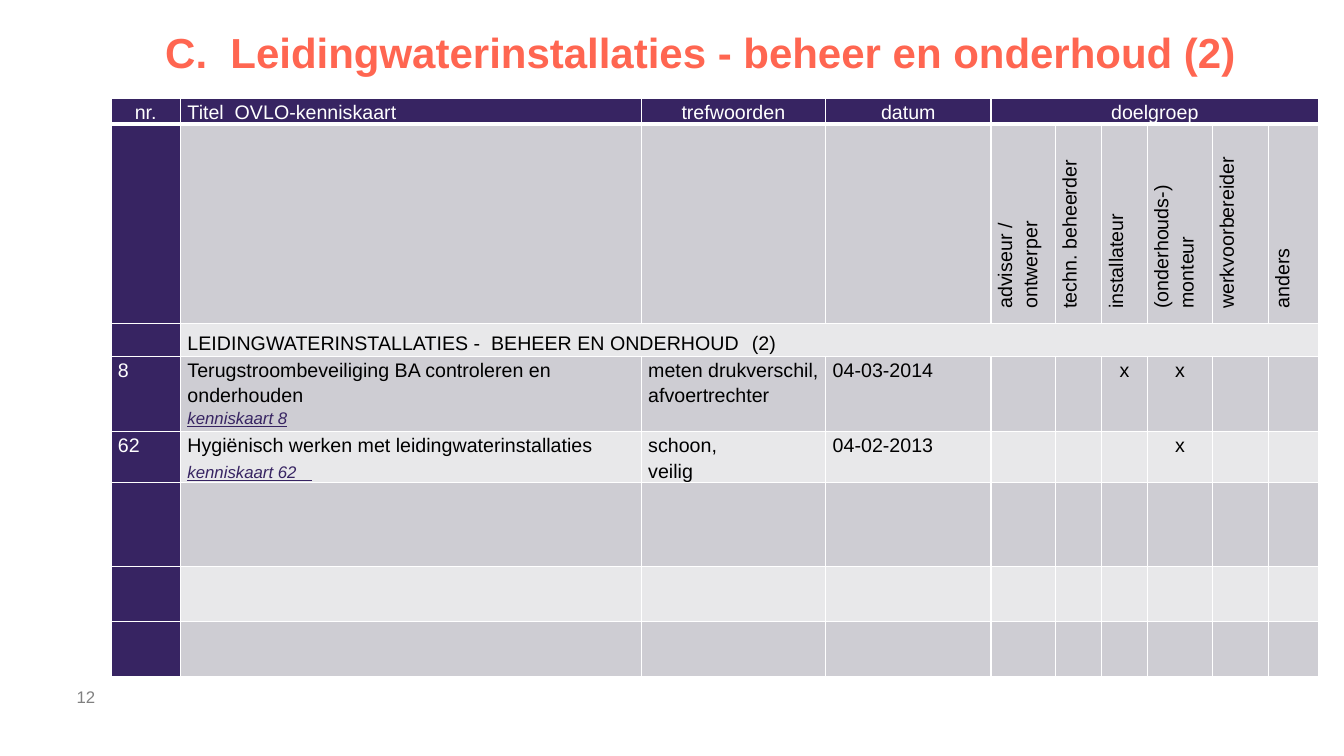
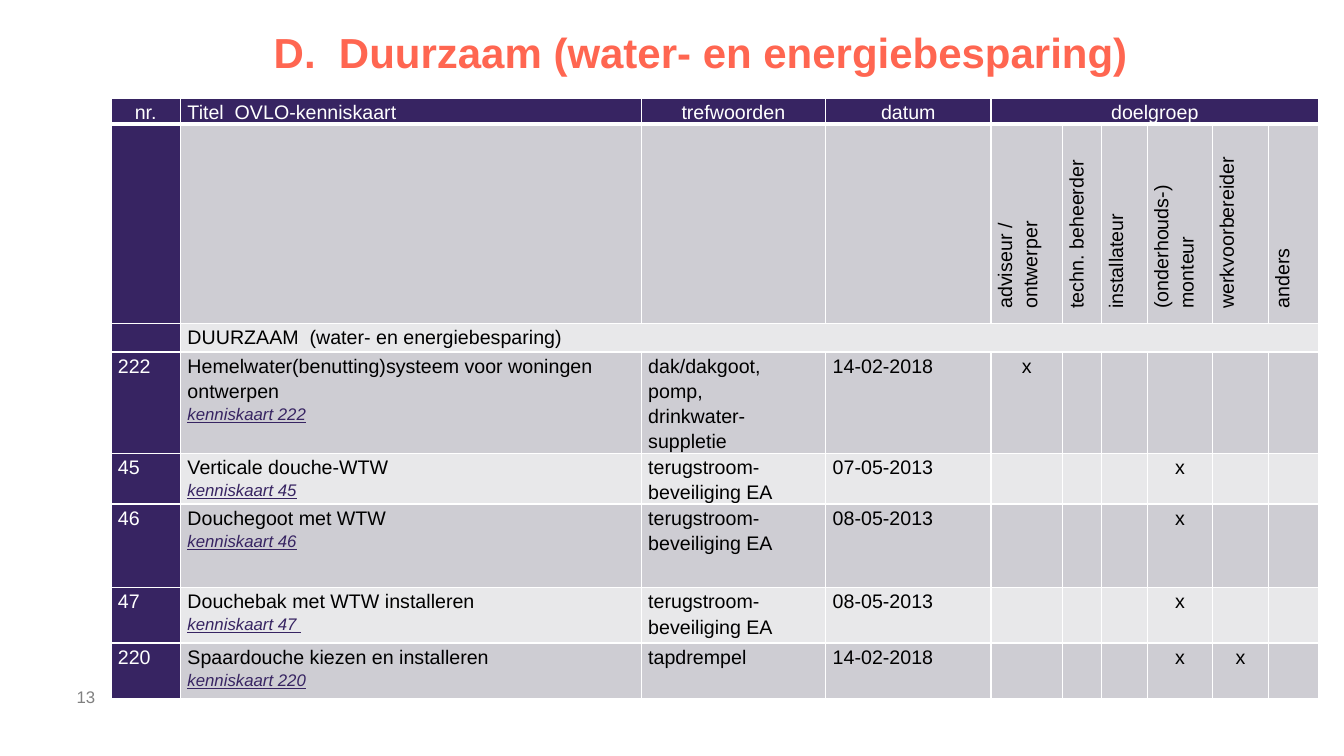
from lxml import etree
from pptx import Presentation
from pptx import util as u
from pptx.dml.color import RGBColor
from pptx.enum import text
from pptx.oxml.ns import qn

FONT = "Arial"
PURPLE, CORAL, GREY = "372462", "FF6651", "808080"
WHITE, BLACK = "FFFFFF", "000000"
BANDS = ("CECDD3", "E8E8EA")
CENTER = text.PP_ALIGN.CENTER

WIDTH, HEIGHT = 13.33, 7.5
TITLE_BOX = (1.12, 0.27, 11.78, 0.54)
NUMBER_BOX = (0.76, 6.71, 0.71, 0.4)
TABLE_LEFT, TABLE_TOP = 1.1, 0.98

HEADERS = ["nr.", "Titel  OVLO-kenniskaart", "trefwoorden", "datum", "doelgroep"]
GROUPS = ["adviseur / ontwerper", "techn. beheerder", "installateur",
          "(onderhouds-)\nmonteur", "werkvoorbereider", "anders"]
FIRST_GROUP = 4
COLUMN_COUNT = FIRST_GROUP + len(GROUPS)
HEADER_ROWS = 3

BODY = {"size": 14, "color": BLACK}
LIGHT = {"size": 14, "color": WHITE}
LINK = {"size": 12, "color": PURPLE, "italic": True, "underline": True}
LINK_TAIL = {"size": 14, "color": PURPLE, "underline": True}


def rgb(value):
    return RGBColor.from_string(value)


def inches(values):
    return [u.Inches(value) for value in values]


def format_run(run, size, color, bold=False, italic=False, underline=False):
    font = run.font
    font.name, font.size = FONT, u.Pt(size)
    font.bold, font.italic, font.underline = bold, italic, underline
    font.color.rgb = rgb(color)


def prepare_frame(frame):
    frame.margin_left = frame.margin_right = frame.margin_top = frame.margin_bottom = 0
    frame.word_wrap = True
    frame.auto_size = text.MSO_AUTO_SIZE.NONE
    frame.vertical_anchor = text.MSO_ANCHOR.MIDDLE


def add_title(slide, title_text):
    title = slide.shapes.title
    title.left, title.top, title.width, title.height = inches(TITLE_BOX)
    prepare_frame(title.text_frame)
    title.text_frame.text = title_text
    paragraph = title.text_frame.paragraphs[0]
    paragraph.alignment, paragraph.line_spacing = CENTER, 0.9
    format_run(paragraph.runs[0], 30, CORAL, bold=True)


def add_number(slide, number):
    frame = slide.shapes.add_textbox(*inches(NUMBER_BOX)).text_frame
    prepare_frame(frame)
    frame.text = str(number)
    format_run(frame.paragraphs[0].runs[0], 12, GREY)


def style_cell(cell, fill, bottom=1):
    cell.margin_left = cell.margin_right = u.Inches(0.07)
    cell.margin_top = cell.margin_bottom = 0
    properties = cell._tc.get_or_add_tcPr()
    for side, points in (("L", 1), ("R", 1), ("T", 1), ("B", bottom)):
        line = etree.SubElement(properties, qn(f"a:ln{side}"), w=str(u.Pt(points)))
        solid = etree.SubElement(line, qn("a:solidFill"))
        etree.SubElement(solid, qn("a:srgbClr"), val=WHITE)
    cell.fill.solid()
    cell.fill.fore_color.rgb = rgb(fill)
    end = etree.SubElement(cell.text_frame.paragraphs[0]._p, qn("a:endParaRPr"))
    end.set("sz", "1400")


def write_cell(cell, paragraphs, alignment=None):
    """Each paragraph is a list of (text, style) runs."""
    frame = cell.text_frame
    for index, runs in enumerate(paragraphs):
        paragraph = frame.paragraphs[0] if index == 0 else frame.add_paragraph()
        paragraph.alignment, paragraph.line_spacing = alignment, 1.15
        for run_text, style in runs:
            run = paragraph.add_run()
            run.text = run_text
            format_run(run, **style)


def lines(content, style=BODY):
    return [[(line, style)] for line in content.split("\n")]


def write_headers(table, section):
    for column, header in enumerate(HEADERS):
        write_cell(table.cell(0, column), lines(header, LIGHT),
                   None if column == 1 else CENTER)
    for column, group in enumerate(GROUPS, FIRST_GROUP):
        cell = table.cell(1, column)
        cell._tc.get_or_add_tcPr().set("vert", "vert270")
        write_cell(cell, lines(group))
        for paragraph in cell.text_frame.paragraphs:
            properties = paragraph._p.get_or_add_pPr()
            properties.set("marL", str(u.Inches(0.08)))
            properties.set("indent", "0")
    last = COLUMN_COUNT - 1
    table.cell(0, FIRST_GROUP).merge(table.cell(0, last))
    table.cell(2, 1).merge(table.cell(2, last))
    write_cell(table.cell(2, 1), [section])


def write_card(table, row, number, title, link, keywords, date, marks):
    write_cell(table.cell(row, 0), lines(number, LIGHT))
    write_cell(table.cell(row, 1), lines(title) + [link])
    write_cell(table.cell(row, 2), lines(keywords))
    write_cell(table.cell(row, 3), lines(date))
    for group in marks:
        write_cell(table.cell(row, FIRST_GROUP + group), lines("x"), CENTER)


def add_card_table(slide, columns, rows, section, cards):
    frame = slide.shapes.add_table(
        len(rows), len(columns),
        *inches((TABLE_LEFT, TABLE_TOP, sum(columns), sum(rows))))
    table = frame.table
    table.first_row = table.horz_banding = False
    for column, width in zip(table.columns, columns):
        column.width = u.Inches(width)
    for row, height in enumerate(rows):
        table.rows[row].height = u.Inches(height)
        for column in range(len(columns)):
            dark = row == 0 or column == 0
            style_cell(table.cell(row, column),
                       PURPLE if dark else BANDS[(row - 1) % 2],
                       bottom=3 if row == 0 else 1)
    write_headers(table, section)
    for row, card in enumerate(cards, HEADER_ROWS):
        write_card(table, row, *card)


def card_slide(presentation, number, title, first_groups, heights, section, cards):
    slide = presentation.slides.add_slide(presentation.slide_layouts[5])
    add_number(slide, number)
    columns = [0.69, 4.57, 1.83, 1.64, *first_groups, 0.45, 0.65, 0.55, 0.5]
    rows = [0.25, 1.98, *heights, 0.5, 0.83, 0.55, 0.55]
    add_card_table(slide, columns, rows, section, cards)
    add_title(slide, title)


def link(number):
    return [(f"kenniskaart {number}", LINK)]


def main():
    presentation = Presentation()
    presentation.slide_width, presentation.slide_height = inches((WIDTH, HEIGHT))
    card_slide(
        presentation, 12, "C.  Leidingwaterinstallaties - beheer en onderhoud (2) ",
        (0.64, 0.46), (0.32, 0.75),
        [("LEIDINGWATERINSTALLATIES -  BEHEER EN ONDERHOUD", BODY),
         (" ", {"size": 18, "color": BLACK}), ("\u00a0(2)".replace("\u00a0", " "), BODY)],
        [("8", "Terugstroombeveiliging BA controleren en onderhouden", link("8"),
          "meten drukverschil,\nafvoertrechter", "04-03-2014", (2, 3)),
         ("62", "Hygiënisch werken met leidingwaterinstallaties",
          link("62 ") + [("  ", LINK_TAIL)], "schoon,\nveilig", "04-02-2013", (3,))])
    recovery = "terugstroom-beveiliging EA"
    card_slide(
        presentation, 13, "D.  Duurzaam (water- en energiebesparing) ",
        (0.71, 0.39), (0.28, 1),
        [("DUURZAAM  (water- en energiebesparing)", BODY)],
        [("222", "Hemelwater(benutting)systeem voor woningen ontwerpen", link("222"),
          "dak/dakgoot, pomp,\ndrinkwater-suppletie", "14-02-2018", (0,)),
         ("45", "Verticale douche-WTW", link("45"), recovery, "07-05-2013", (3,)),
         ("46", "Douchegoot met WTW", link("46"), recovery, "08-05-2013", (3,)),
         ("47", "Douchebak met WTW installeren", link("47 "), recovery,
          "08-05-2013", (3,)),
         ("220", "Spaardouche kiezen en installeren", link("220"), "tapdrempel",
          "14-02-2018", (3, 4))])
    presentation.save("out.pptx")


if __name__ == "__main__":
    main()
